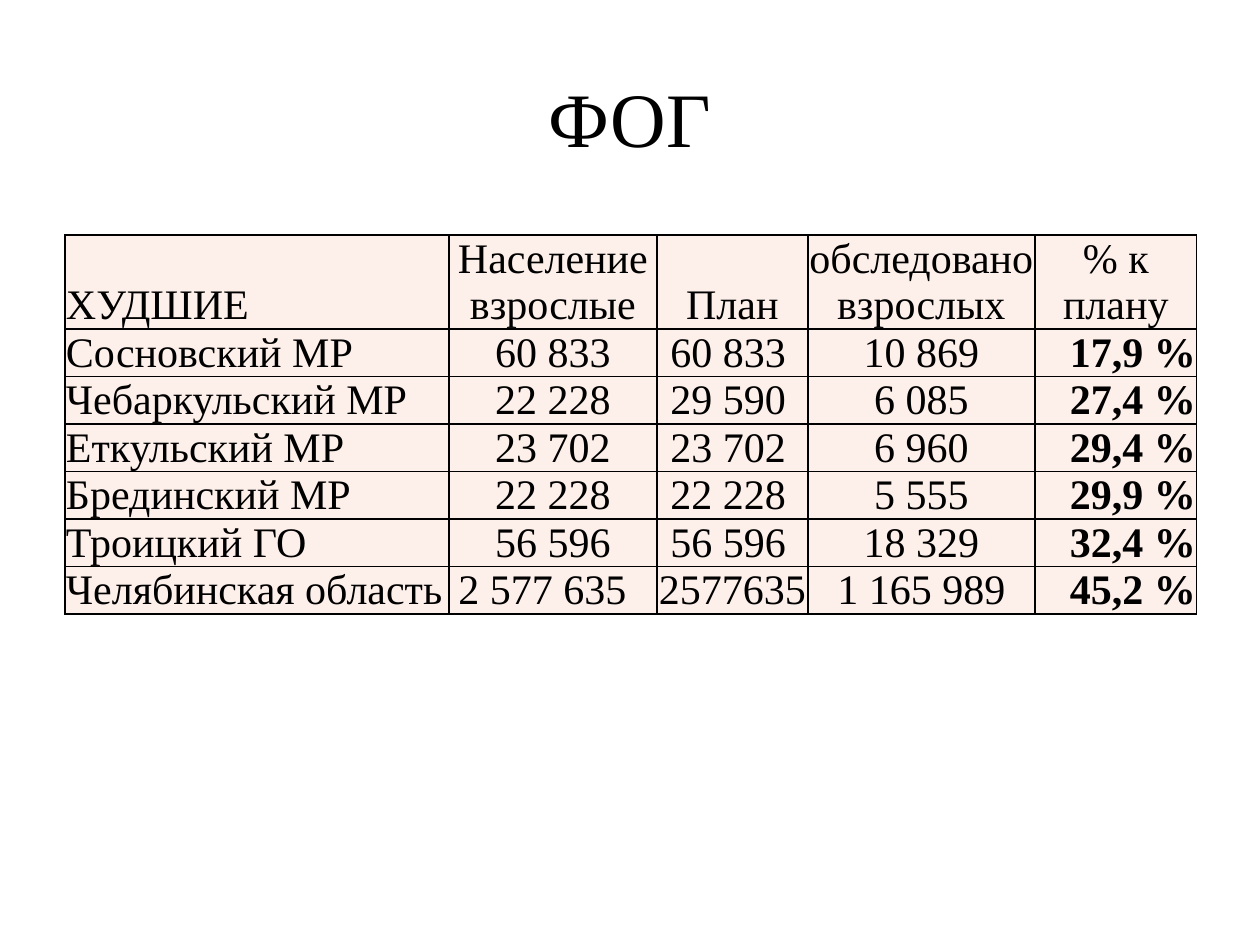
from lxml.etree import SubElement
from pptx import Presentation
from pptx.dml.color import RGBColor
from pptx.enum.text import MSO_ANCHOR as Anchor, PP_ALIGN as Align
from pptx.oxml.ns import qn
from pptx.util import Pt

PX = 914400 // 126
FONT = "Times New Roman"
BLACK = RGBColor(0, 0, 0)
PEACH = RGBColor(0xFD, 0xEF, 0xE9)

COLS = [384, 208, 151, 227, 162]
HEAD, LINE = 94, 47
EDGE, GAP = 1, 22
PLAN, RATE = 2, 4
ROWS = [
    ["ХУДШИЕ", "Население взрослые", "План", "обследовано взрослых", "% к плану"],
    ["Сосновский МР", "60 833", "60 833", "10 869", "17,9 %"],
    ["Чебаркульский МР", "22 228", "29 590", "6 085", "27,4 %"],
    ["Еткульский МР", "23 702", "23 702", "6 960", "29,4 %"],
    ["Брединский МР", "22 228", "22 228", "5 555", "29,9 %"],
    ["Троицкий ГО", "56 596", "56 596", "18 329", "32,4 %"],
    ["Челябинская область", "2 577 635", "2577635", "1 165 989", "45,2 %"],
]


def place(shape, box):
    shape.left, shape.top, shape.width, shape.height = (n * PX for n in box)


def write(frame, text, size, align, bold=False):
    para = frame.paragraphs[0]
    para.alignment = align
    run = para.add_run()
    run.text = text
    font = run.font
    font.name, font.size, font.bold = FONT, Pt(size), bold
    font.color.rgb = BLACK


def add_title(slide, box):
    title = slide.shapes.title
    place(title, box)
    title.text_frame.vertical_anchor = Anchor.MIDDLE
    write(title.text_frame, "ФОГ", 44, Align.CENTER)


def frame_cell(cell):
    props = cell._tc.get_or_add_tcPr()
    for i, side in enumerate(("a:lnL", "a:lnR", "a:lnT", "a:lnB")):
        line = SubElement(props, qn(side), w=str(Pt(1)))
        props.remove(line)
        props.insert(i, line)
        fill = SubElement(line, qn("a:solidFill"))
        SubElement(fill, qn("a:srgbClr"), val=str(BLACK))


def fill_cell(cell, text, row, col):
    last = len(ROWS) - 1
    align = Align.LEFT if col == 0 else Align.CENTER
    if row and (col == RATE or col == PLAN and row < last):
        align = Align.RIGHT
    wide = (0 < row < last and col == PLAN) or (row == last and col == 1)
    cell.margin_left = cell.margin_top = EDGE * PX
    cell.margin_right = (GAP if wide else EDGE) * PX
    cell.margin_bottom = 0
    cell.vertical_anchor = Anchor.MIDDLE if row and col else Anchor.BOTTOM
    cell.fill.solid()
    cell.fill.fore_color.rgb = PEACH
    frame_cell(cell)
    write(cell.text_frame, text, 24, align, bool(row) and col == RATE)


def add_grid(slide, left, top):
    high = HEAD + LINE * (len(ROWS) - 1)
    box = [n * PX for n in (left, top, sum(COLS), high)]
    table = slide.shapes.add_table(len(ROWS), len(COLS), *box).table
    table.first_row = table.horz_banding = False
    for col, width in zip(table.columns, COLS):
        col.width = width * PX
    for r, texts in enumerate(ROWS):
        table.rows[r].height = (LINE if r else HEAD) * PX
        for c, text in enumerate(texts):
            fill_cell(table.cell(r, c), text, r, c)


def main():
    deck = Presentation()
    deck.slide_width, deck.slide_height = 1260 * PX, 945 * PX
    slide = deck.slides.add_slide(deck.slide_layouts[5])
    add_title(slide, (63, 38, 1134, 158))
    add_grid(slide, 65, 235)
    deck.save("out.pptx")


if __name__ == "__main__":
    main()
